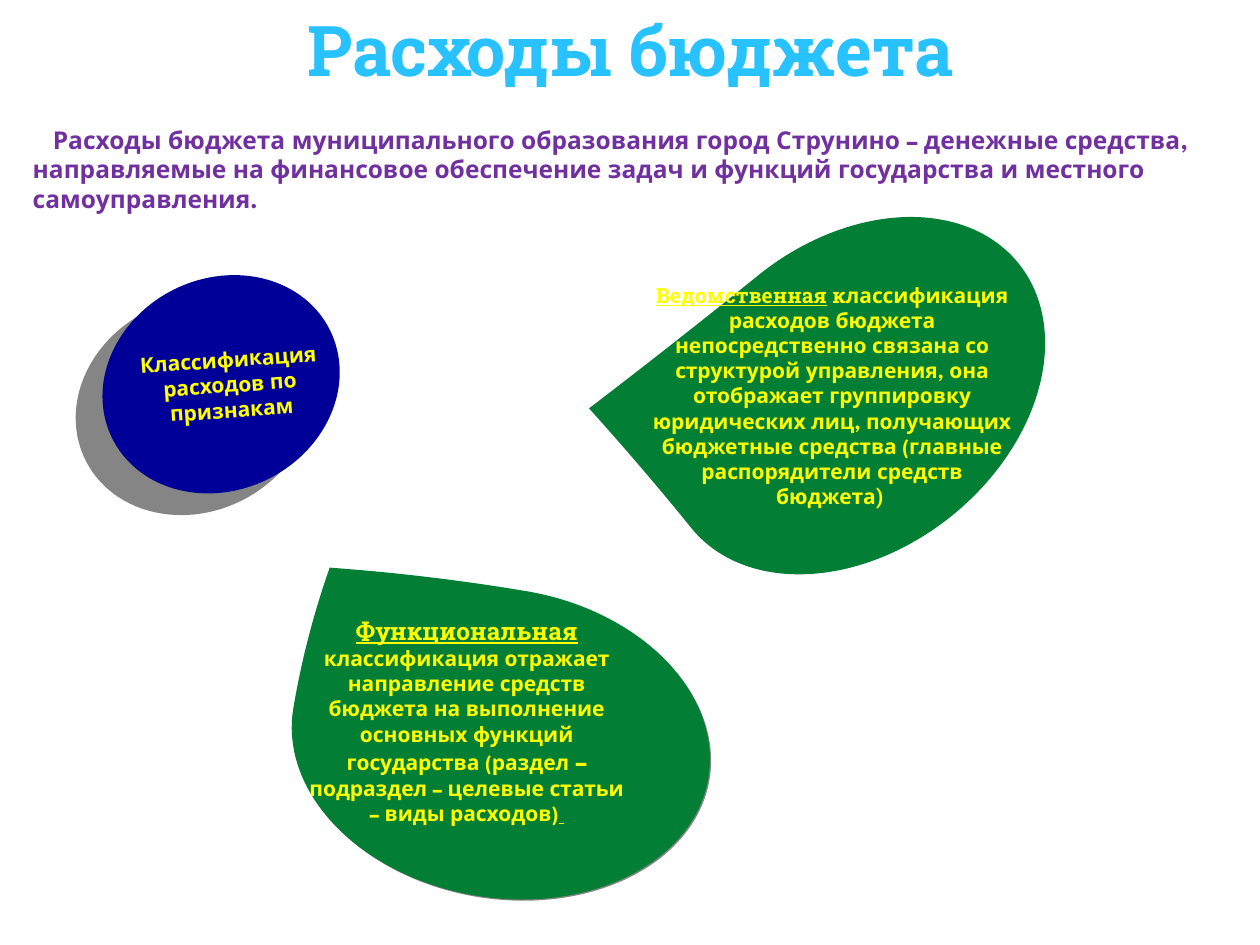
"""Build a slide on the classes of budget spending."""
from lxml.etree import SubElement
from pptx import Presentation
from pptx.dml.color import RGBColor
from pptx.enum.shapes import MSO_SHAPE
from pptx.enum.text import MSO_ANCHOR, MSO_AUTO_SIZE, PP_ALIGN
from pptx.oxml.ns import qn
from pptx.util import Inches, Pt

SKY = RGBColor(0x27, 0xC2, 0xFF)
PURPLE = RGBColor(0x70, 0x30, 0xA0)
GREEN = RGBColor(0x03, 0x7F, 0x35)
NAVY = RGBColor(0x00, 0x00, 0x99)
YELLOW = RGBColor(0xFF, 0xFF, 0x00)
SLAB = "Roboto Slab"
SANS = "League Spartan"


def write(shape, box, runs, color, align):
    shape.left, shape.top, shape.width, shape.height = map(Inches, box)
    frame = shape.text_frame
    frame.word_wrap = True
    frame.auto_size = MSO_AUTO_SIZE.NONE
    frame.vertical_anchor = MSO_ANCHOR.TOP
    para = frame.paragraphs[0]
    para.alignment = align
    para.space_before = Pt(0)
    for text, size, face, line in runs:
        run = para.add_run()
        run.text = text
        font = run.font
        font.size, font.name, font.bold = Pt(size), face, True
        font.underline = line
        font.color.rgb = color
    return para


def draw(kind, box, turn, color, shade=None):
    shape = slide.shapes.add_shape(kind, *map(Inches, box))
    shape.rotation = turn
    shape.fill.solid()
    shape.fill.fore_color.rgb = color
    shape.line.fill.background()
    shape.shadow.inherit = False
    if shade:
        dist, angle = shade
        effects = shape._element.spPr.find(qn("a:effectLst"))
        cast = SubElement(effects, qn("a:outerShdw"), dist=str(Pt(dist)),
                          dir=str(angle * 60000), algn="ctr", rotWithShape="0")
        tint = SubElement(cast, qn("a:srgbClr"), val="000000")
        SubElement(tint, qn("a:alpha"), val="48000")
    return shape


deck = Presentation()
deck.slide_width, deck.slide_height = Inches(10), Inches(7.5)
slide = deck.slides.add_slide(deck.slide_layouts[1])
title, body = slide.placeholders

write(title, (0, 0, 10, 0.76), [("Расходы бюджета", 40, SLAB, False)], SKY, PP_ALIGN.CENTER)

intro = write(body, (0.16, 0.94, 9.69, 0.8), [
    ("Расходы бюджета муниципального образования город Струнино – денежные средства, "
     "направляемые на финансовое обеспечение задач и функций государства и местного "
     "самоуправления.", 14, SANS, False)], PURPLE, PP_ALIGN.LEFT)
props = intro._p.get_or_add_pPr()
props.set("marL", "0")
props.set("indent", str(Inches(0.16)))
SubElement(props, qn("a:buNone"))

draw(MSO_SHAPE.OVAL, (0.79, 2.21, 1.93, 1.68), -26.5, NAVY, (19.7, 141))
for left, top, turn, tip, shade in [
    (2.75, 4.23, 279.5, 0.94, (1, 45)),
    (5.56, 1.47, 231, 1.02, None),
]:
    drop = draw(MSO_SHAPE.TEAR, (left, top, 2.45, 3.34), turn, GREEN, shade)
    drop.adjustments[0] = tip

labels = [
    ((1, 2.7, 1.65, 0.7), -4, [
        ("Классификация расходов по признакам", 12, SANS, False)]),
    ((5.08, 2.19, 3.05, 1.69), 0, [
        ("Ведомственная", 12, SLAB, True),
        (" к", 12, SLAB, False),
        ("лассификация расходов бюджета непосредственно связана со структурой "
         "управления, она отображает группировку юридических лиц, получающих бюджетные "
         "средства (главные распорядители средств бюджета", 12, SANS, False),
        (") ", 12, SLAB, False)]),
    ((2.34, 4.84, 2.73, 1.76), 0, [
        ("Функциональная ", 14, SLAB, True),
        ("классификация отражает направление средств бюджета на выполнение основных "
         "функций государства (раздел", 12, SANS, False),
        (" – ", 14, SANS, False),
        ("подраздел – целевые статьи – виды расходов)", 12, SANS, False),
        (" ", 12, SLAB, True)]),
]
for box, turn, runs in labels:
    label = slide.shapes.add_textbox(*map(Inches, box))
    label.rotation = turn
    write(label, box, runs, YELLOW, PP_ALIGN.CENTER)

deck.save("out.pptx")
